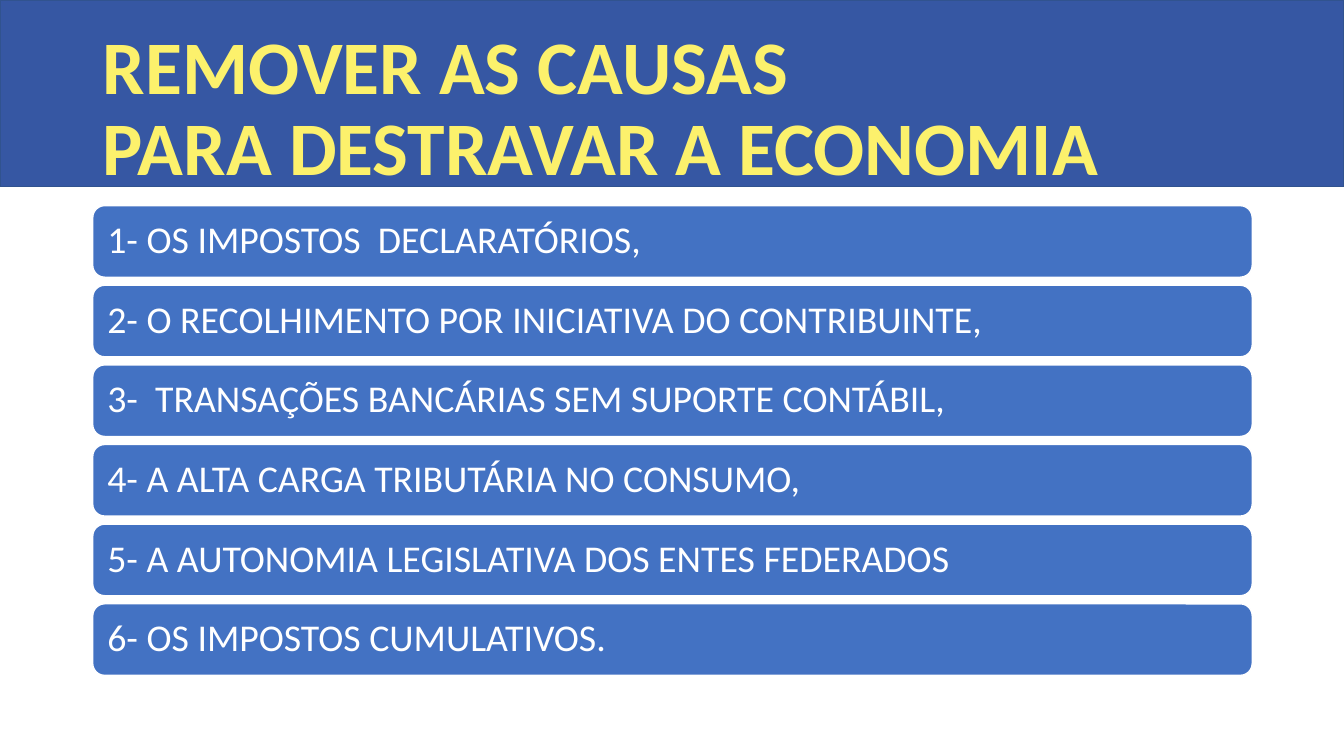
from pptx import Presentation, util as u
from pptx.dml.color import RGBColor
from pptx.enum import shapes, text

NAVY = RGBColor(0x36, 0x57, 0xA3)
EDGE = RGBColor(0x31, 0x53, 0x8F)
BLUE = RGBColor(0x43, 0x72, 0xC3)
WHITE = RGBColor(0xFF, 0xFF, 0xFF)
YELLOW = RGBColor(0xFC, 0xF1, 0x6C)

TITLE = "REMOVER AS CAUSAS \vPARA DESTRAVAR A ECONOMIA"
CAUSES = [
    "1- OS IMPOSTOS  DECLARATÓRIOS,",
    "2- O RECOLHIMENTO POR INICIATIVA DO CONTRIBUINTE,",
    "3-  TRANSAÇÕES BANCÁRIAS SEM SUPORTE CONTÁBIL,",
    "4- A ALTA CARGA TRIBUTÁRIA NO CONSUMO,",
    "5- A AUTONOMIA LEGISLATIVA DOS ENTES FEDERADOS",
    "6- OS IMPOSTOS CUMULATIVOS.",
]


class Deck:
    font = "Calibri"
    wide, high = 13.33, 7.5
    left, span = 0.92, 11.5            # the single column
    top, pitch, row = 2.04, 0.79, 0.71  # the rows of causes

    def __init__(self):
        self.prs = Presentation()
        self.prs.slide_width = u.Inches(self.wide)
        self.prs.slide_height = u.Inches(self.high)
        self.slide = self.prs.slides.add_slide(self.prs.slide_layouts[5])

    def box(self, kind, x, y, w, h, fill, line):
        shape = self.slide.shapes.add_shape(kind, *map(u.Inches, (x, y, w, h)))
        shape.shadow.inherit = False
        shape.fill.solid()
        shape.fill.fore_color.rgb = fill
        shape.line.color.rgb = line
        shape.line.width = u.Pt(1)
        return shape

    def label(self, shape, words, size, color, pad, bold=False):
        """Set left-aligned, vertically centred text; pad is (side, end) in inches."""
        frame = shape.text_frame
        frame.text = words
        frame.word_wrap = True
        frame.auto_size = text.MSO_AUTO_SIZE.NONE
        frame.vertical_anchor = text.MSO_ANCHOR.MIDDLE
        frame.margin_left = frame.margin_right = u.Inches(pad[0])
        frame.margin_top = frame.margin_bottom = u.Inches(pad[1])
        for para in frame.paragraphs:
            para.alignment = text.PP_ALIGN.LEFT
            para.line_spacing = 0.9
            for run in para.runs:
                run.font.name = self.font
                run.font.size = u.Pt(size)
                run.font.bold = bold
                run.font.color.rgb = color

    def band(self, h):
        self.box(shapes.MSO_SHAPE.RECTANGLE, 0, 0, self.wide, h, NAVY, EDGE)

    def title(self, words, y, h):
        """Fill the title placeholder and bring it in front of the band."""
        title = self.slide.shapes.title
        title.left, title.top = u.Inches(self.left), u.Inches(y)
        title.width, title.height = u.Inches(self.span), u.Inches(h)
        self.label(title, words, 54, YELLOW, (0.1, 0.05), bold=True)
        title.element.getparent().append(title.element)

    def cause(self, index, words):
        y = self.top + index * self.pitch
        bar = self.box(shapes.MSO_SHAPE.ROUNDED_RECTANGLE,
                       self.left, y, self.span, self.row, BLUE, WHITE)
        self.label(bar, words, 27, WHITE, (0.11, 0.11))


def main():
    deck = Deck()
    deck.band(1.85)
    for index, words in enumerate(CAUSES):
        deck.cause(index, words)
    deck.title(TITLE, 0.37, 1.45)
    deck.prs.save("out.pptx")


if __name__ == "__main__":
    main()
